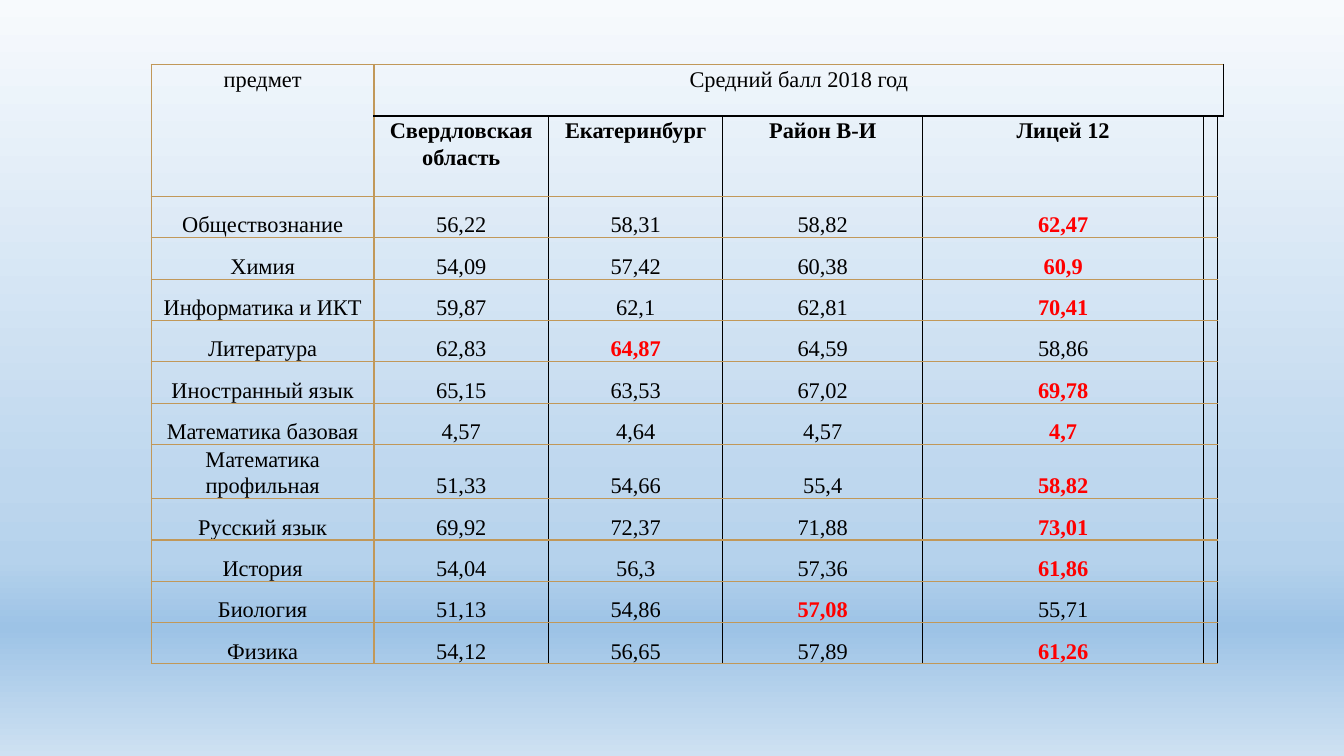
from lxml import etree
from pptx import Presentation
from pptx.dml.color import RGBColor
from pptx.enum.text import MSO_ANCHOR, PP_ALIGN
from pptx.oxml.ns import qn
from pptx.util import Inches, Pt

TOP, BOTTOM = MSO_ANCHOR.TOP, MSO_ANCHOR.BOTTOM
CENTER = PP_ALIGN.CENTER

SUBJECT_HEADING = "предмет"
SCORE_HEADING = "Средний балл 2018 год"
PLACES = ["Свердловская область", "Екатеринбург", "Район В-И", "Лицей 12"]
SCORES = [
    ("Обществознание", "56,22", "58,31", "58,82", "62,47"),
    ("Химия", "54,09", "57,42", "60,38", "60,9"),
    ("Информатика и ИКТ", "59,87", "62,1", "62,81", "70,41"),
    ("Литература", "62,83", "64,87", "64,59", "58,86"),
    ("Иностранный язык", "65,15", "63,53", "67,02", "69,78"),
    ("Математика базовая", "4,57", "4,64", "4,57", "4,7"),
    ("Математика профильная", "51,33", "54,66", "55,4", "58,82"),
    ("Русский язык", "69,92", "72,37", "71,88", "73,01"),
    ("История", "54,04", "56,3", "57,36", "61,86"),
    ("Биология", "51,13", "54,86", "57,08", "55,71"),
    ("Физика", "54,12", "56,65", "57,89", "61,26"),
]

BLACK = RGBColor(0x00, 0x00, 0x00)
RED = RGBColor(0xFF, 0x00, 0x00)
GOLD = RGBColor(0xC1, 0x98, 0x59)
SKY = [
    (0, RGBColor(0xF7, 0xFA, 0xFD)),
    (64, RGBColor(0xBE, 0xD7, 0xEE)),
    (74, RGBColor(0xB5, 0xD2, 0xEC)),
    (83, RGBColor(0x9D, 0xC3, 0xE6)),
    (100, RGBColor(0xCE, 0xE1, 0xF2)),
]
FONT = "Times New Roman"
PLAIN_TABLE_STYLE = "{2D5ABB26-0587-4C30-8999-92F81FD0307C}"

LEFT, TABLE_TOP = 1.5, 0.64
COLUMN_WIDTHS = [2.21, 1.73, 1.73, 1.98, 2.79, 0.14, 0.04]
ROW_HEIGHTS = [0.51, 0.8] + [0.41] * len(SCORES)
LAST_COLUMN = len(COLUMN_WIDTHS) - 1


def add_color(parent, color):
    etree.SubElement(parent, qn("a:srgbClr"), val=str(color))


def paint_background(slide):
    fill = slide.background.fill
    fill.gradient()
    fill.gradient_angle = 270
    stops = slide.element.find(".//" + qn("a:gsLst"))
    for stop in list(stops):
        stops.remove(stop)
    for percent, color in SKY:
        add_color(etree.SubElement(stops, qn("a:gs"), pos=str(percent * 1000)), color)


def cell_borders(row, column):
    """Colours of the left, right, top and bottom edges; None is no line."""
    if column == 0:
        return GOLD, GOLD, GOLD, GOLD
    if row == 0:
        return GOLD, BLACK, GOLD, BLACK
    if column == LAST_COLUMN:
        return BLACK, None, BLACK if row == 1 else None, None
    return GOLD if column == 1 else BLACK, BLACK, BLACK if row == 1 else GOLD, GOLD


def draw_borders(cell, colors):
    properties = cell._tc.get_or_add_tcPr()
    for edge, color in zip("LRTB", colors):
        line = etree.SubElement(properties, qn("a:ln" + edge), w=str(Pt(1)))
        if color is None:
            etree.SubElement(line, qn("a:noFill"))
        else:
            add_color(etree.SubElement(line, qn("a:solidFill")), color)


def write(cell, text, bold=False, color=BLACK):
    cell.text_frame.text = text
    paragraph = cell.text_frame.paragraphs[0]
    paragraph.alignment = CENTER
    paragraph.line_spacing = 1.07
    font = paragraph.runs[0].font
    font.name, font.size, font.bold = FONT, Pt(16), bold
    font.color.rgb = color


def add_score_table(slide):
    frame = slide.shapes.add_table(
        len(ROW_HEIGHTS), len(COLUMN_WIDTHS), Inches(LEFT), Inches(TABLE_TOP),
        Inches(sum(COLUMN_WIDTHS)), Inches(sum(ROW_HEIGHTS)))
    table = frame.table
    table.first_row = table.horz_banding = False
    table._tbl.tblPr.find(qn("a:tableStyleId")).text = PLAIN_TABLE_STYLE
    for column, width in zip(table.columns, COLUMN_WIDTHS):
        column.width = Inches(width)

    for r, height in enumerate(ROW_HEIGHTS):
        table.rows[r].height = Inches(height)
        for c in range(len(COLUMN_WIDTHS)):
            cell = table.cell(r, c)
            cell.margin_left = cell.margin_right = cell.margin_top = Inches(0.01)
            cell.margin_bottom = 0
            cell.vertical_anchor = TOP if r < 2 else BOTTOM
            draw_borders(cell, cell_borders(r, c))
            cell.fill.background()

    table.cell(0, 0).merge(table.cell(1, 0))
    table.cell(0, 1).merge(table.cell(0, LAST_COLUMN))
    write(table.cell(0, 0), SUBJECT_HEADING)
    write(table.cell(0, 1), SCORE_HEADING)
    for c, place in enumerate(PLACES, start=1):
        write(table.cell(1, c), place, bold=True)
    for r, (subject, *scores) in enumerate(SCORES, start=2):
        write(table.cell(r, 0), subject)
        best = max(scores, key=lambda score: float(score.replace(",", ".")))
        for c, score in enumerate(scores, start=1):
            is_best = score == best
            write(table.cell(r, c), score, is_best, RED if is_best else BLACK)


def main():
    presentation = Presentation()
    presentation.slide_width = Inches(13.33)
    presentation.slide_height = Inches(7.5)
    slide = presentation.slides.add_slide(presentation.slide_layouts[6])
    paint_background(slide)
    add_score_table(slide)
    presentation.save("out.pptx")


if __name__ == "__main__":
    main()
